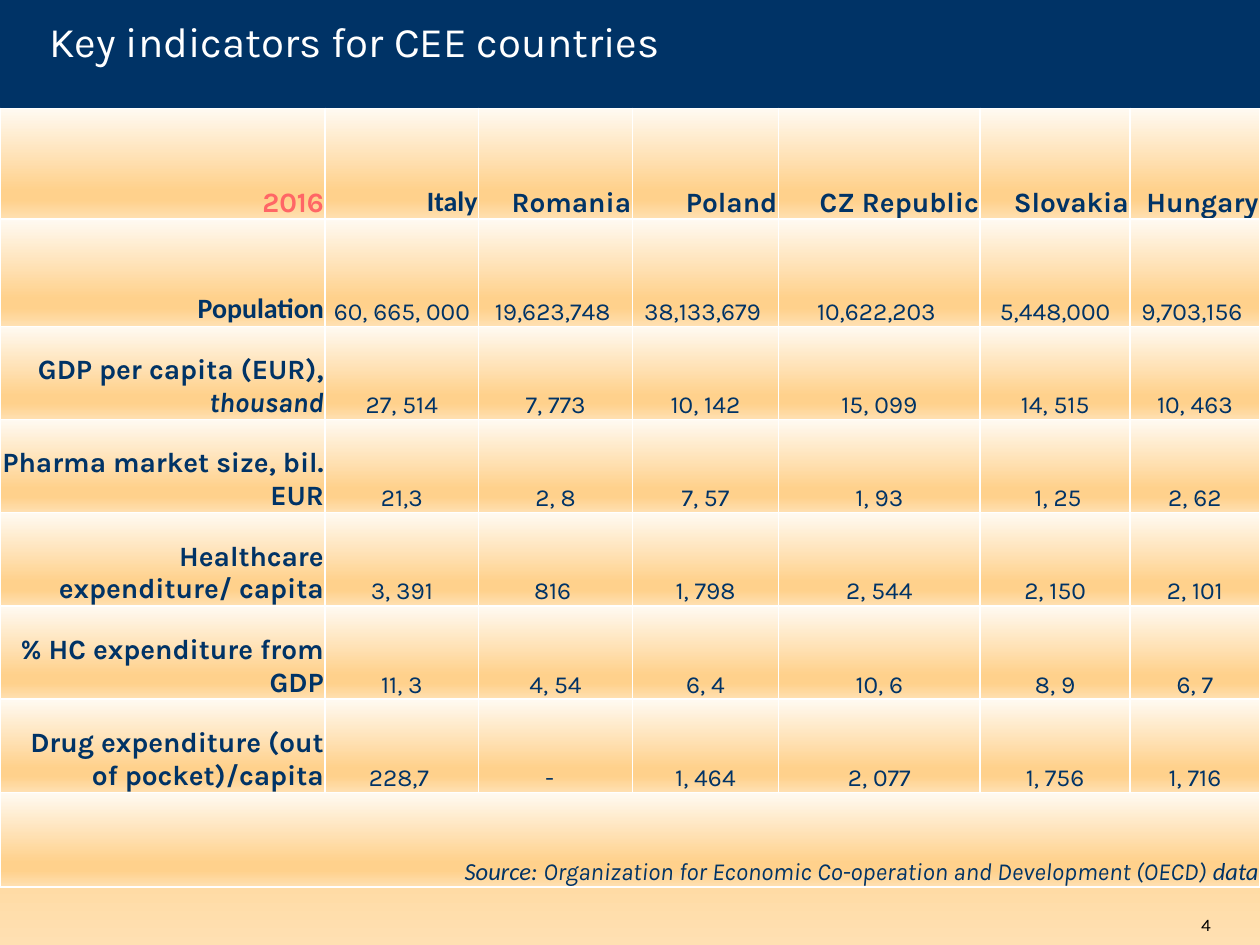
import pptx
import pptx.dml.color
import pptx.enum.shapes
import pptx.enum.text
import pptx.oxml
import pptx.oxml.ns
import pptx.util
from pptx.util import Inches

NAVY = "003366"
CORAL = "FF6666"
WHITE = "FFFFFF"
BLACK = "000000"
SAND_STOPS = [(0, "FFFAF2"), (74, "FFD18C"), (83, "FFD18C"), (100, "FFE0B2")]
ALIGN = pptx.enum.text.PP_ALIGN
ANCHOR = pptx.enum.text.MSO_ANCHOR

COLUMN_WIDTHS = [2.58, 1.22, 1.22, 1.16, 1.6, 1.19, 1.03]
ROW_HEIGHTS = [0.88, 0.85] + [0.74] * 5 + [0.75]
INDICATORS = [
    ["2016", "Italy", "Romania", "Poland", "CZ Republic", "Slovakia", "Hungary"],
    ["Population", "60, 665, 000", "19,623,748 ", "38,133,679 ", "10,622,203 ", "5,448,000", "9,703,156 "],
    ["GDP per capita (EUR), ", "27, 514", "7, 773", "10, 142", "15, 099", "14, 515", "10, 463"],
    ["Pharma market size, bil. EUR", "21,3", "2, 8", "7, 57", "1, 93", " 1, 25", "2, 62"],
    ["Healthcare expenditure/ capita", "3, 391", "816 ", "1, 798", "2, 544", "2, 150", "2, 101"],
    ["% HC expenditure from GDP", "11, 3", "4, 54", "6, 4", "10, 6", "8, 9", "6, 7"],
    ["Drug expenditure (out of pocket)/capita", "228,7 ", "-  ", "1, 464", "2, 077", "1, 756", "1, 716"],
]
SOURCE_PARTS = [
    ("Source: ", "Calibri"),
    ("Organization for Economic Co-operation and Development (OECD)", "Karla"),
    (" data", "Calibri"),
]


def color(hex_string):
    return pptx.dml.color.RGBColor.from_string(hex_string)


def style_span(span, size, hex_string, font="Karla", bold=False, italic=False):
    span.font.size = pptx.util.Pt(size)
    span.font.color.rgb = color(hex_string)
    span.font.name = font
    span.font.bold = bold
    span.font.italic = italic


def fill_sand(fill, owner):
    """Fill with the top-to-bottom sand gradient; owner is the XML element holding the fill."""
    fill.gradient()
    fill.gradient_angle = 270
    stops = next(owner.iter(pptx.oxml.ns.qn("a:gsLst")))
    for stop in list(stops):
        stops.remove(stop)
    for percent, hex_string in SAND_STOPS:
        stops.append(pptx.oxml.parse_xml(
            f'<a:gs {pptx.oxml.ns.nsdecls("a")} pos="{percent * 1000}">'
            f'<a:srgbClr val="{hex_string}"/></a:gs>'))


def add_borders(cell):
    properties = cell._tc.get_or_add_tcPr()
    for index, side in enumerate("LRTB"):
        properties.insert(index, pptx.oxml.parse_xml(
            f'<a:ln{side} {pptx.oxml.ns.nsdecls("a")} w="12700"><a:solidFill>'
            f'<a:srgbClr val="{WHITE}"/></a:solidFill></a:ln{side}>'))


def add_label(page, left, top, width, height, text, size, hex_string, align, anchor):
    box = page.shapes.add_textbox(left, top, width, height)
    frame = box.text_frame
    frame.word_wrap = True
    frame.vertical_anchor = anchor
    frame.margin_left = frame.margin_right = frame.margin_top = frame.margin_bottom = 0
    frame.text = text
    para = frame.paragraphs[0]
    para.alignment = align
    style_span(para.runs[0], size, hex_string)


def add_header(page, left, top, width, height):
    band = page.shapes.add_shape(pptx.enum.shapes.MSO_SHAPE.RECTANGLE, left, top, width, height)
    band.shadow.inherit = False
    band.fill.solid()
    band.fill.fore_color.rgb = color(NAVY)
    band.line.fill.background()
    add_label(page, left + Inches(0.39), top + Inches(0.12), width - Inches(0.86), Inches(0.74),
              "Key indicators for CEE countries", 24, WHITE, ALIGN.LEFT, ANCHOR.TOP)


def prepare_cell(cell):
    cell.margin_left = cell.margin_right = cell.margin_top = Inches(0.01)
    cell.margin_bottom = 0
    cell.vertical_anchor = ANCHOR.BOTTOM
    fill_sand(cell.fill, cell._tc)
    add_borders(cell)


def add_indicator_table(page, left, top, width, height):
    table = page.shapes.add_table(
        len(ROW_HEIGHTS), len(COLUMN_WIDTHS), left, top, width, height).table
    table.first_row = table.horz_banding = False
    for column, column_width in zip(table.columns, COLUMN_WIDTHS):
        column.width = Inches(column_width)
    for row, row_height in zip(table.rows, ROW_HEIGHTS):
        row.height = Inches(row_height)
    for cell in table.iter_cells():
        prepare_cell(cell)

    # Headings are bold and right-aligned, values are centred
    for row_index, texts in enumerate(INDICATORS):
        for column_index, text in enumerate(texts):
            heading = row_index == 0 or column_index == 0
            cell = table.cell(row_index, column_index)
            cell.text_frame.text = text
            para = cell.text_frame.paragraphs[0]
            para.alignment = ALIGN.RIGHT if heading else ALIGN.CENTER
            style_span(para.runs[0], 16 if heading else 14,
                       CORAL if text == "2016" else NAVY,
                       "Calibri" if text in ("Italy", "Population") else "Karla", heading)
    unit = table.cell(2, 0).text_frame.paragraphs[0].add_run()
    unit.text = "thousand"
    style_span(unit, 16, NAVY, bold=True, italic=True)

    # Source line across the last row
    last_row = len(ROW_HEIGHTS) - 1
    source_cell = table.cell(last_row, 0)
    source_cell.merge(table.cell(last_row, len(COLUMN_WIDTHS) - 1))
    para = source_cell.text_frame.paragraphs[0]
    para.alignment = ALIGN.RIGHT
    for text, font in SOURCE_PARTS:
        span = para.add_run()
        span.text = text
        style_span(span, 14, NAVY, font, italic=True)


def main():
    deck = pptx.Presentation()
    deck.slide_width, deck.slide_height = Inches(10), Inches(7.5)
    page = deck.slides.add_slide(deck.slide_layouts[6])
    fill_sand(page.background.fill, page._element)
    add_header(page, 0, 0, deck.slide_width, Inches(1.08))
    # Page number
    add_label(page, Inches(8.63), Inches(7.22), Inches(0.98), Inches(0.2),
              "4", 10, BLACK, ALIGN.RIGHT, ANCHOR.BOTTOM)
    add_indicator_table(page, 0, Inches(0.86), deck.slide_width, Inches(sum(ROW_HEIGHTS)))
    deck.save("out.pptx")


if __name__ == "__main__":
    main()
